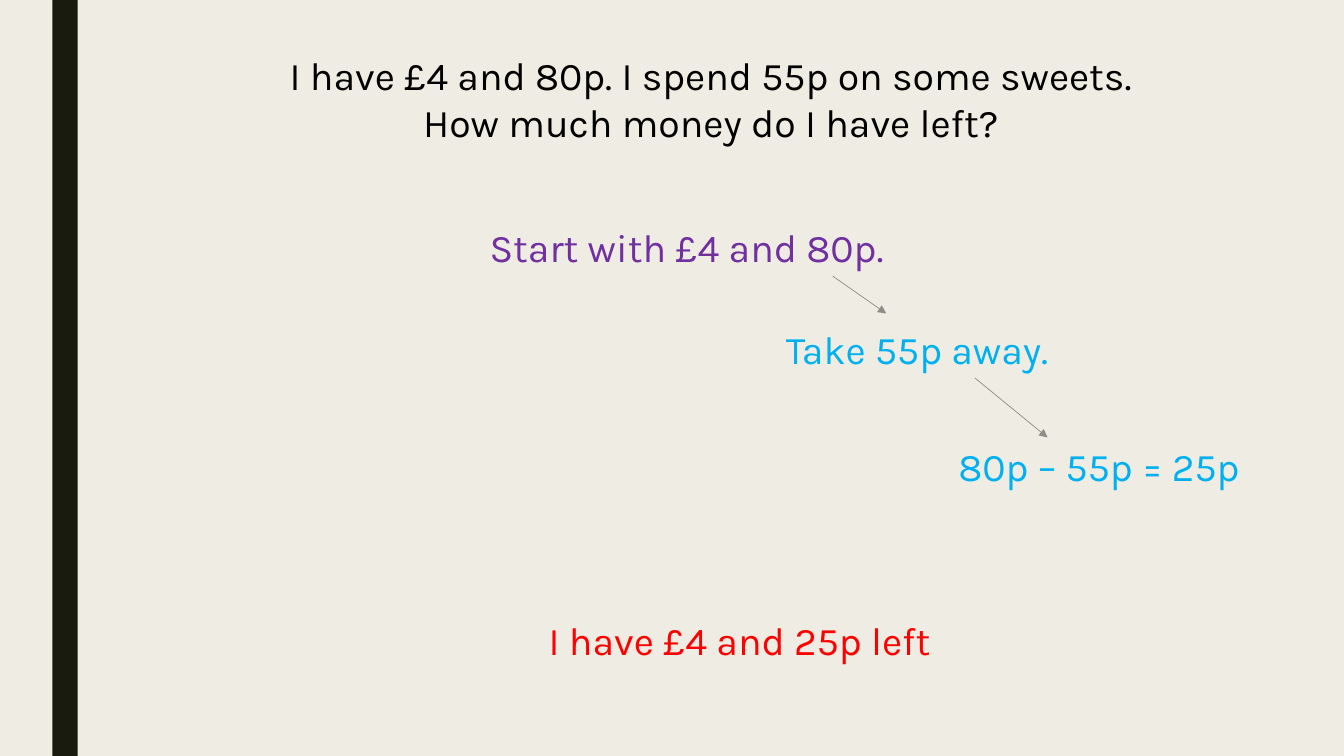
from lxml.etree import SubElement
from pptx import Presentation
from pptx.dml.color import RGBColor
from pptx.enum.shapes import MSO_CONNECTOR as Connector, MSO_SHAPE as Shape
from pptx.enum.text import MSO_AUTO_SIZE as AutoSize, PP_ALIGN as Align
from pptx.oxml.ns import qn
from pptx.util import Inches, Pt

SLIDE_WIDTH, SLIDE_HEIGHT = 13.33, 7.5
FONT = "Karla"
COLORS = {
    "background": "EFEDE3",
    "band": "191B0E",
    "question": "000000",
    "start": "7030A0",
    "subtraction": "00B0F0",
    "answer": "FF0000",
    "arrow": "8C8D86",
}
WIDE, LINE = 11.49, 0.57


def color(name):
    """Return the named palette colour."""
    return RGBColor.from_string(COLORS[name])


def add_band(slide, left, width):
    """Draw the full-height dark band."""
    band = slide.shapes.add_shape(
        Shape.RECTANGLE, Inches(left), 0, Inches(width), Inches(SLIDE_HEIGHT))
    band.shadow.inherit = False
    band.fill.solid()
    band.fill.fore_color.rgb = color("band")
    band.line.fill.background()


def add_statement(slide, box, lines, color_name):
    """Write centred lines of text in the given box."""
    statement = slide.shapes.add_textbox(*map(Inches, box))
    frame = statement.text_frame
    frame.word_wrap = True
    frame.auto_size = AutoSize.SHAPE_TO_FIT_TEXT
    frame.text = "\n".join(lines)
    for paragraph in frame.paragraphs:
        paragraph.alignment = Align.CENTER
        paragraph.font.name = FONT
        paragraph.font.size = Pt(28)
        paragraph.font.color.rgb = color(color_name)


def add_step_arrow(slide, start, end):
    """Draw a thin arrow from one step to the next."""
    arrow = slide.shapes.add_connector(
        Connector.STRAIGHT, *map(Inches, (*start, *end)))
    arrow.line.color.rgb = color("arrow")
    arrow.line.width = Pt(0.5)
    SubElement(arrow.line._get_or_add_ln(), qn("a:tailEnd"), type="triangle")
    SubElement(arrow._element.spPr, qn("a:effectLst"))


def add_working(slide, left, top):
    """Lay out the steps of the subtraction and their arrows."""
    steps = [
        ((0, 0, WIDE, LINE), "Start with £4 and 80p. ", "start"),
        ((6.42, 1.01, 3.13, LINE), "Take 55p away.", "subtraction"),
        ((7.98, 2.17, 3.62, LINE), "80p – 55p = 25p", "subtraction"),
    ]
    for (x, y, width, height), text, color_name in steps:
        add_statement(slide, (left + x, top + y, width, height), [text], color_name)
    for (x1, y1), (x2, y2) in [((7.15, LINE), (7.68, 0.94)), ((8.56, 1.58), (9.28, 2.17))]:
        add_step_arrow(slide, (left + x1, top + y1), (left + x2, top + y2))


def build_money_problem(presentation):
    """Build the slide with the question, working and answer."""
    slide = presentation.slides.add_slide(presentation.slide_layouts[6])
    slide.background.fill.solid()
    slide.background.fill.fore_color.rgb = color("background")
    add_band(slide, 0.52, 0.25)
    question = ["I have £4 and 80p. I spend 55p on some sweets. ",
                "How much money do I have left? "]
    add_statement(slide, (1.35, 0.46, WIDE, 1.04), question, "question")
    add_working(slide, 1.11, 2.17)
    add_statement(slide, (1.59, 6.07, WIDE, LINE), ["I have £4 and 25p left"], "answer")


def main():
    """Create and save the presentation."""
    presentation = Presentation()
    presentation.slide_width = Inches(SLIDE_WIDTH)
    presentation.slide_height = Inches(SLIDE_HEIGHT)
    build_money_problem(presentation)
    presentation.save("out.pptx")


if __name__ == "__main__":
    main()
